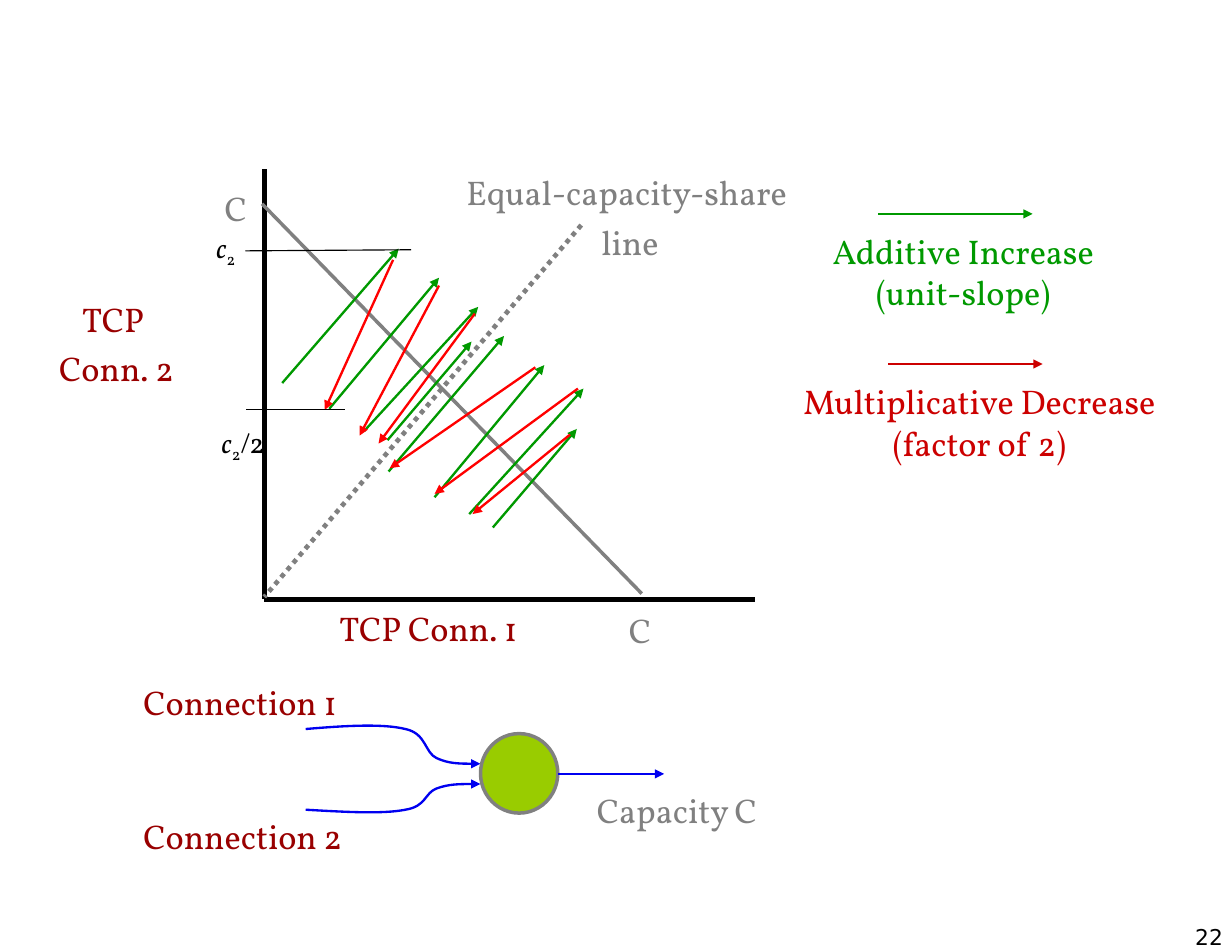
from lxml import etree
from pptx import Presentation
from pptx.dml.color import RGBColor
from pptx.enum import dml, shapes, text
from pptx.oxml.ns import qn
from pptx.util import Inches, Pt

COLORS = {
    "axis": "000000", "gray": "808080", "name": "990000", "increase": "009900",
    "decrease": "FF0000", "legend": "CC0000", "flow": "0000F0", "router": "99CC00",
}
FONT = "Vollkorn"
ALIGN = {"l": text.PP_ALIGN.LEFT, "c": text.PP_ALIGN.CENTER, "r": text.PP_ALIGN.RIGHT}

# Chart origin and the arrows (x1, y1, x2, y2), each pointing to its second end
ORIGIN_X, ORIGIN_Y = 2.36, 5.35
INCREASES = [
    (2.52, 3.42, 3.56, 2.22), (2.94, 3.65, 3.92, 2.48), (3.25, 3.85, 4.27, 2.74),
    (3.46, 3.93, 4.21, 3.05), (3.47, 4.21, 4.5, 3), (3.88, 4.44, 4.86, 3.26),
    (4.19, 4.59, 5.21, 3.47), (4.4, 4.71, 5.15, 3.83),
]
DECREASES = [
    (3.51, 2.32, 2.9, 3.66), (3.92, 2.55, 3.21, 3.89), (4.24, 2.8, 3.38, 3.96),
    (4.78, 3.28, 3.48, 4.18), (5.16, 3.47, 3.88, 4.41), (5.09, 3.88, 4.22, 4.59),
]
# Bezier points: a start, then two controls and an end for each segment
FLOW_X = [2.73, 3.08, 3.42, 3.62, 3.81, 3.79, 3.9, 4.01, 4.15, 4.29]
FLOW_1_Y = [6.51, 6.48, 6.46, 6.51, 6.55, 6.72, 6.77, 6.82, 6.82, 6.82]
FLOW_2_Y = [7.23, 7.25, 7.27, 7.23, 7.2, 7.08, 7.04, 7, 7, 7]


def rgb(color):
    return RGBColor.from_string(COLORS[color])


def style_line(sp, color, width, arrow=False):
    sp.line.color.rgb = rgb(color)
    sp.line.width = Pt(width)
    if arrow:
        etree.SubElement(sp.line._get_or_add_ln(), qn("a:tailEnd"), type="triangle")


def add_line(slide, ends, color, width=1.5, arrow=False, dash=None):
    sp = slide.shapes.add_connector(
        shapes.MSO_CONNECTOR.STRAIGHT, *[Inches(v) for v in ends])
    style_line(sp, color, width, arrow)
    if dash:
        sp.line.dash_style = dash
    etree.SubElement(sp._element.spPr, qn("a:effectLst"))


def add_curve(slide, xs, ys, color):
    points = [(Inches(x), Inches(y)) for x, y in zip(xs, ys)]
    builder = slide.shapes.build_freeform(*points[0])
    builder.add_line_segments(points[1:], close=False)
    sp = builder.convert_to_shape()
    # Join every three straight segments into one cubic curve
    path = next(sp._element.iter(qn("a:path")))
    segments = path.findall(qn("a:lnTo"))
    for i in range(0, len(segments), 3):
        curve = etree.SubElement(path, qn("a:cubicBezTo"))
        for segment in segments[i:i + 3]:
            curve.append(segment[0])
            path.remove(segment)
    sp.fill.background()
    sp.shadow.inherit = False
    style_line(sp, color, 1.5, arrow=True)


def add_text(slide, box, lines, color, size=22, align="c", wrap=True, gap=0,
             font=FONT, insets=(0.11, 0.06)):
    """Each line is a list of (text, style) runs; style is "", "i" or "sub"."""
    sp = slide.shapes.add_textbox(*[Inches(v) for v in box])
    tf = sp.text_frame
    tf.word_wrap = wrap
    tf.auto_size = text.MSO_AUTO_SIZE.SHAPE_TO_FIT_TEXT
    tf.margin_left = tf.margin_right = Inches(insets[0])
    tf.margin_top = tf.margin_bottom = Inches(insets[1])
    for i, runs in enumerate(lines):
        p = tf.add_paragraph() if i else tf.paragraphs[0]
        p.alignment = ALIGN[align]
        if i and gap:
            p.space_before = Pt(gap)
        for words, style in runs:
            r = p.add_run()
            r.text = words
            r.font.name = font
            r.font.size = Pt(size)
            r.font.color.rgb = rgb(color)
            if style == "i":
                r.font.italic = True
            elif style == "sub":
                r.font._element.set("baseline", "-25000")
    return sp


def add_label(slide, box, words, color, **options):
    lines = [[(line, "")] for line in words.split("\n")]
    return add_text(slide, box, lines, color, **options)


def add_plot(slide):
    # Axes, equal-share line and capacity line
    add_line(slide, (ORIGIN_X, ORIGIN_Y, 6.74, ORIGIN_Y), "axis", 3)
    add_line(slide, (ORIGIN_X, ORIGIN_Y, ORIGIN_X, 1.51), "axis", 3)
    add_line(slide, (5.19, 2.01, ORIGIN_X, 5.33), "gray", 3,
             dash=dml.MSO_LINE.ROUND_DOT)
    add_line(slide, (2.34, 1.82, 5.73, 5.3), "gray", 2.25)
    for left, top in ((1.86, 1.61), (5.47, 5.38)):
        add_label(slide, (left, top, 0.49, 0.49), "C", "gray")
    add_label(slide, (3.59, 1.47, 4.07, 0.94), "Equal-capacity-share \nline",
              "gray", gap=5.6)
    add_label(slide, (1.69, 5.36, 4.27, 0.49), "TCP Conn. 1", "name")
    add_label(slide, (0.13, 2.6, 1.82, 0.94), "TCP \nConn. 2", "name", gap=5.6)

    # Window steps
    for ends in INCREASES:
        add_line(slide, ends, "increase", arrow=True)
    for ends in DECREASES:
        add_line(slide, ends, "decrease", arrow=True)

    # Levels before and after halving
    c2 = [("c", "i"), ("2", "sub")]
    add_line(slide, (3.67, 2.23, 2.19, 2.24), "axis", 0.75)
    add_text(slide, (1.69, 2, 0.52, 0.42), [c2], "axis", 18, "r")
    add_line(slide, (3.08, 3.66, 2.2, 3.66), "axis", 0.75)
    add_text(slide, (1.6, 3.74, 0.87, 0.42), [c2 + [("/2", "")]], "axis", 18, "r")


def add_legend(slide):
    add_line(slide, (7.84, 1.91, 9.22, 1.91), "increase", arrow=True)
    add_label(slide, (7.28, 2, 2.64, 0.86), "Additive Increase\n(unit-slope)",
              "increase", wrap=False)
    add_line(slide, (7.93, 3.25, 9.31, 3.25), "legend", arrow=True)
    add_label(slide, (7.02, 3.34, 3.45, 0.86),
              "Multiplicative Decrease\n(factor of 2)", "legend", wrap=False)


def add_network(slide):
    # Two connections sharing one router and its outgoing link
    for ys in (FLOW_1_Y, FLOW_2_Y):
        add_curve(slide, FLOW_X, ys, "flow")
    router = slide.shapes.add_shape(
        shapes.MSO_SHAPE.OVAL, *[Inches(v) for v in (4.29, 6.55, 0.69, 0.71)])
    router.shadow.inherit = False
    router.fill.solid()
    router.fill.fore_color.rgb = rgb("router")
    style_line(router, "gray", 2.25)
    add_line(slide, (4.98, 6.91, 5.93, 6.91), "flow", arrow=True)
    add_label(slide, (5.22, 6.99, 1.72, 0.49), "Capacity C", "gray", align="l")
    for number, top in ((1, 6.02), (2, 7.22)):
        add_label(slide, (1.17, top, 2.02, 0.49), f"Connection {number}", "name",
                  align="l")


def main():
    prs = Presentation()
    prs.slide_width, prs.slide_height = Inches(11), Inches(8.5)
    slide = prs.slides.add_slide(prs.slide_layouts[6])
    add_plot(slide)
    add_legend(slide)
    add_network(slide)
    # Page number
    page = add_label(slide, (10.58, 8.24, 0.34, 0.24), "22", "axis", size=14,
                     align="r", wrap=False, font="DejaVu Sans", insets=(0, 0))
    page.text_frame.vertical_anchor = text.MSO_ANCHOR.MIDDLE
    prs.save("out.pptx")


if __name__ == "__main__":
    main()
